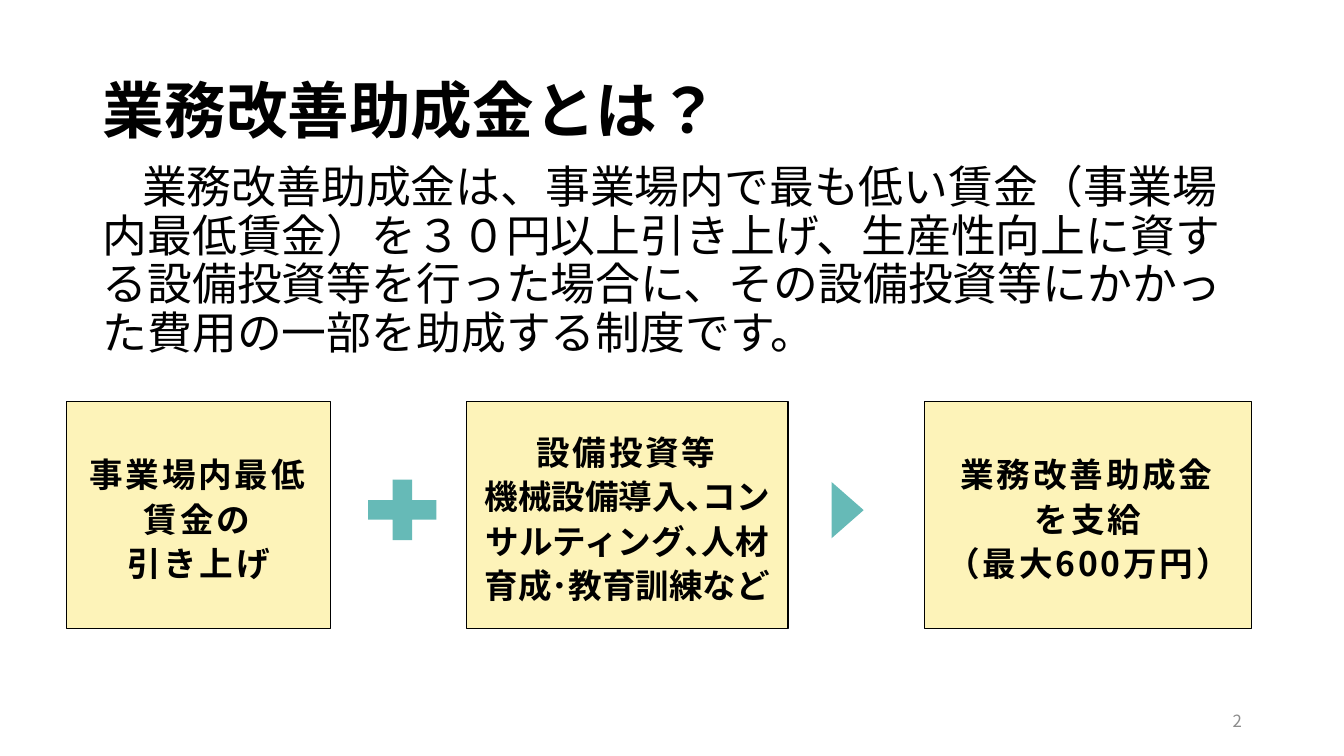
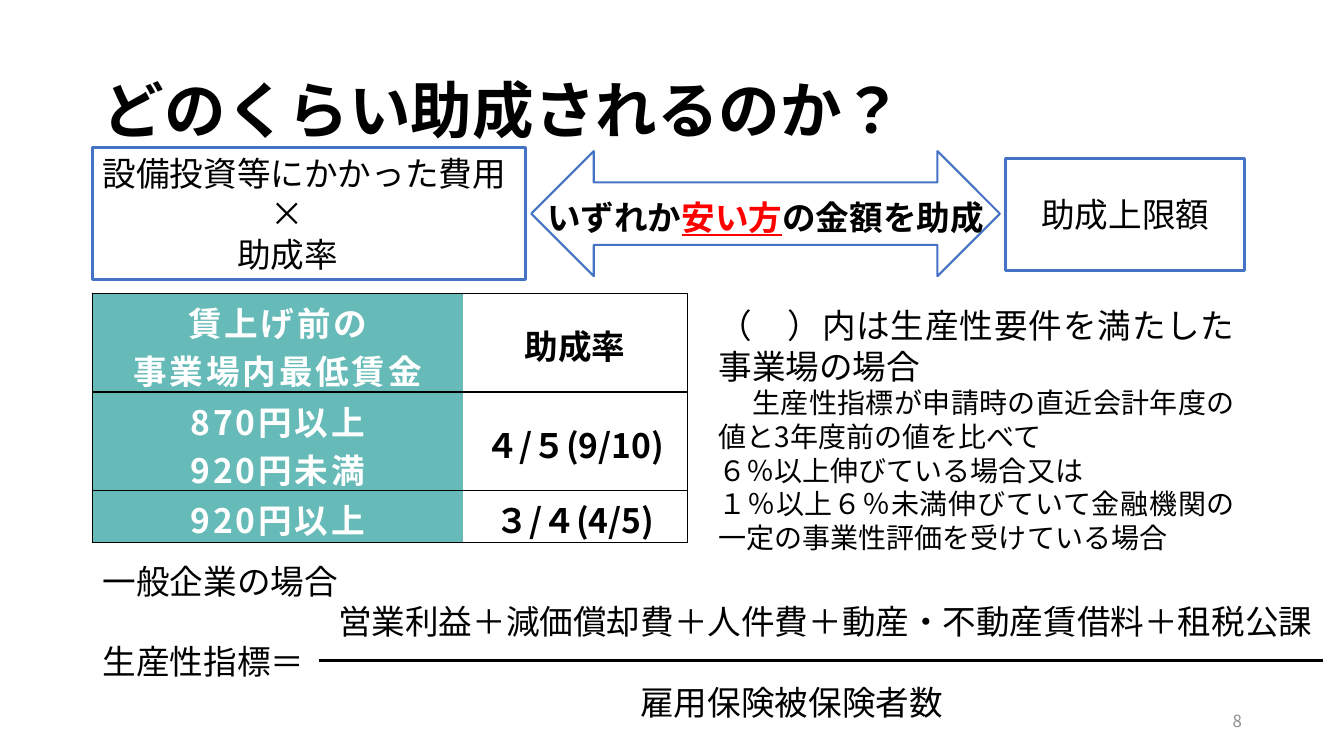
from pptx import Presentation
from pptx.dml.color import RGBColor
from pptx.enum import shapes, text
from pptx.oxml.ns import qn
from pptx.util import Cm, Pt
from lxml import etree

# Shared look
BLACK = RGBColor(0x00, 0x00, 0x00)
WHITE = RGBColor(0xFF, 0xFF, 0xFF)
GREY = RGBColor(0x8C, 0x8C, 0x8C)
RED = RGBColor(0xFF, 0x00, 0x00)
BLUE = RGBColor(0x44, 0x72, 0xC4)
TEAL = RGBColor(0x66, 0xBA, 0xB7)
CREAM = RGBColor(0xFD, 0xF3, 0xB9)
FONT = "Noto Sans CJK JP"
MARGIN = 2.34
CONTENT_WIDTH = 29.21

SHAPE = shapes.MSO_SHAPE
ALIGN = text.PP_ALIGN
ANCHOR = text.MSO_ANCHOR


def add_run(paragraph, words, size=24, color=BLACK, bold=False,
            underline=False, spacing=0):
    """Add one styled run; spacing is letter spacing in points."""
    run = paragraph.add_run()
    run.text = words
    font = run.font
    font.name, font.size, font.bold = FONT, Pt(size), bold
    font.color.rgb = color
    if underline:
        font.underline = True
    properties = run._r.get_or_add_rPr()
    properties.set("lang", "ja-JP")
    if spacing:
        properties.set("spc", str(spacing * 100))
    latin = properties.find(qn("a:latin"))
    east_asian = etree.Element(qn("a:ea"), typeface=FONT)
    latin.addnext(east_asian)


def add_paragraph(frame, words, align=ALIGN.LEFT, line=1.0, left=0,
                  first=0, **style):
    """Add a paragraph; words is a string or a list of (string, style)."""
    paragraph = frame.paragraphs[0]
    if paragraph.runs:
        paragraph = frame.add_paragraph()
    paragraph.alignment, paragraph.line_spacing = align, line
    properties = paragraph._p.get_or_add_pPr()
    properties.set("marL", str(Cm(left)))
    properties.set("indent", str(Cm(first)))
    pieces = [(words, {})] if isinstance(words, str) else words
    for piece, own_style in pieces:
        for number, part in enumerate(piece.split("\n")):
            if number:
                paragraph.add_line_break()
            if part:
                add_run(paragraph, part, **{**style, **own_style})


def add_text_box(slide, x, y, width, height, anchor=ANCHOR.TOP):
    box = slide.shapes.add_textbox(Cm(x), Cm(y), Cm(width), Cm(height))
    frame = box.text_frame
    frame.word_wrap = True
    frame.vertical_anchor = anchor
    return frame


def add_preset(slide, preset, x, y, width, height, fill=None, line=None,
               line_width=0.75):
    shape = slide.shapes.add_shape(preset, Cm(x), Cm(y), Cm(width), Cm(height))
    shape.shadow.inherit = False
    if fill is None:
        shape.fill.background()
    else:
        shape.fill.solid()
        shape.fill.fore_color.rgb = fill
    if line is None:
        shape.line.fill.background()
    else:
        shape.line.color.rgb = line
        shape.line.width = Pt(line_width)
    shape.text_frame.word_wrap = True
    shape.text_frame.vertical_anchor = ANCHOR.MIDDLE
    return shape


def add_titled_slide(deck, title, page):
    """Title-only slide with the shared title style and page number."""
    slide = deck.slides.add_slide(deck.slide_layouts[5])
    heading = slide.shapes.title
    heading.left, heading.top = Cm(MARGIN), Cm(1.02)
    heading.width, heading.height = Cm(CONTENT_WIDTH), Cm(3.68)
    frame = heading.text_frame
    frame.word_wrap = True
    frame.auto_size = text.MSO_AUTO_SIZE.NONE
    frame.vertical_anchor = ANCHOR.MIDDLE
    add_paragraph(frame, title, line=0.9, size=44, bold=True)
    footer = add_text_box(slide, 23.93, 17.65, 7.62, 1.02, ANCHOR.MIDDLE)
    add_paragraph(footer, page, ALIGN.RIGHT, size=12, color=GREY)
    return slide


def add_step(slide, x, width, paragraphs):
    """Cream box in the row of steps."""
    step = add_preset(slide, SHAPE.RECTANGLE, x, 10.11, width, 5.72, CREAM, BLACK)
    frame = step.text_frame
    frame.margin_left = frame.margin_right = Cm(0.3)
    frame.margin_top, frame.margin_bottom = Cm(0.2), Cm(0.1)
    for words in paragraphs:
        add_paragraph(frame, words, ALIGN.CENTER, line=1.1, bold=True, spacing=2)


def set_borders(cell, visible):
    """Draw the named edges (L, R, T, B) in black and hide the others."""
    properties = cell._tc.get_or_add_tcPr()
    for edge in "LRTB":
        line = etree.SubElement(properties, qn(f"a:ln{edge}"), w=str(Pt(1)))
        if edge in visible:
            fill = etree.SubElement(line, qn("a:solidFill"))
            etree.SubElement(fill, qn("a:srgbClr"), val=str(BLACK))
        else:
            etree.SubElement(line, qn("a:noFill"))


def add_rate_table(slide, rows, column_widths, row_heights):
    table = slide.shapes.add_table(
        len(rows), len(column_widths), Cm(MARGIN), Cm(7.39),
        Cm(sum(column_widths)), Cm(sum(row_heights))).table
    for column, width in zip(table.columns, column_widths):
        column.width = Cm(width)
    for row, height, (wage, rate) in zip(table.rows, row_heights, rows):
        row.height = Cm(height)
        wage_cell, rate_cell = row.cells
        for cell, edges in ((wage_cell, "LTB"), (rate_cell, "RTB")):
            set_borders(cell, edges)
            cell.margin_left = cell.margin_right = Cm(0.2)
            cell.margin_top, cell.margin_bottom = Cm(0.1), 0
            cell.vertical_anchor = ANCHOR.MIDDLE
        wage_cell.fill.solid()
        wage_cell.fill.fore_color.rgb = TEAL
        rate_cell.fill.background()
        for words in wage:
            add_paragraph(wage_cell.text_frame, words, ALIGN.CENTER,
                          color=WHITE, bold=True, spacing=2)
        add_paragraph(rate_cell.text_frame, rate, ALIGN.CENTER, bold=True)


def add_fraction_bar(slide, x1, x2, y):
    bar = slide.shapes.add_connector(
        shapes.MSO_CONNECTOR.STRAIGHT, Cm(x1), Cm(y), Cm(x2), Cm(y))
    bar.line.color.rgb = BLACK
    bar.line.width = Pt(2.25)
    etree.SubElement(bar._element.spPr, qn("a:effectLst"))


def build_overview(deck):
    slide = add_titled_slide(deck, "業務改善助成金とは？", "2")

    # Explanation
    summary = add_text_box(slide, MARGIN, 4.04, CONTENT_WIDTH, 5.72)
    add_paragraph(
        summary,
        "業務改善助成金は、事業場内で最も低い賃金（事業場内最低賃金）を３０円以上引き上げ、"
        "生産性向上に資する設備投資等を行った場合に、その設備投資等にかかった費用の一部を"
        "助成する制度です。",
        line=0.9, first=0.99, size=32)

    # Raise + investment > subsidy
    add_step(slide, 1.68, 6.65,
             [[("事業場内最低賃金の\n引き上", {}), ("げ", {"spacing": 0})]])
    add_step(slide, 11.76, 8.1,
             [[("設備投資等\n", {}),
               ("機械設備導入､コンサルティング､人材育成･教育訓練など", {"spacing": 0})]])
    add_step(slide, 23.29, 8.26, ["業務改善助成金\nを支給", "（最大600万円）"])
    add_preset(slide, SHAPE.MATH_PLUS, 8.97, 11.81, 2.34, 2.08, TEAL)
    pointer = add_preset(slide, SHAPE.ISOSCELES_TRIANGLE, 20.65, 12.45, 1.42, 0.81, TEAL)
    pointer.rotation = 90


def build_amount(deck):
    slide = add_titled_slide(deck, "どのくらい助成されるのか？", "8")

    # The two amounts compared
    cost = add_preset(slide, SHAPE.RECTANGLE, MARGIN, 3.71, 10.9, 3.33,
                      line=BLUE, line_width=2).text_frame
    for words, left in (("設備投資等にかかった費用", 0), ("×", 4.23), ("助成率", 3.39)):
        add_paragraph(cost, words, left=left)
    limit = add_preset(slide, SHAPE.RECTANGLE, 25.35, 3.99, 6.02, 2.82,
                       line=BLUE, line_width=2).text_frame
    add_paragraph(limit, "助成上限額", ALIGN.CENTER)
    add_preset(slide, SHAPE.LEFT_RIGHT_ARROW, 13.39, 3.81, 11.81, 3.15,
               line=BLUE, line_width=1.5)
    choice = add_text_box(slide, 13.54, 4.83, 11.66, 1.27)
    add_paragraph(choice, [("いずれか", {}),
                           ("安い方", {"color": RED, "underline": True}),
                           ("の金額を助成", {})], bold=True)

    # Subsidy rates
    add_rate_table(slide, [
        (["賃上げ前の", "事業場内最低賃金"], "助成率"),
        (["870円以上", "920円未満"], "４/５(9/10)"),
        (["920円以上"], "３/４(4/5)"),
    ], [9.32, 5.66], [2.49, 2.49, 1.3])

    # Productivity condition
    condition = add_text_box(slide, 17.86, 7.57, 13.51, 7.77)
    add_paragraph(condition, "（　）内は生産性要件を満たした事業場の場合", ALIGN.JUSTIFY)
    for words, first in (
            ("生産性指標が申請時の直近会計年度の値と3年度前の値を比べて", 0.85),
            ("６％以上伸びている場合又は", 0),
            ("１％以上６％未満伸びていて金融機関の一定の事業性評価を受けている場合", 0)):
        add_paragraph(condition, words, ALIGN.JUSTIFY, first=first, size=20)

    # Productivity formula
    formula = add_text_box(slide, MARGIN, 14, 31.01, 4.37)
    for words, left in (
            ("一般企業の場合", 0),
            ("営業利益＋減価償却費＋人件費＋動産・不動産賃借料＋租税公課", 5.93),
            ("生産性指標＝", 0),
            ("雇用保険被保険者数", 13.55)):
        add_paragraph(formula, words, left=left)
    add_fraction_bar(slide, 8.03, 33.35, 16.64)


def main():
    deck = Presentation()
    deck.slide_width, deck.slide_height = Cm(33.87), Cm(19.05)
    build_overview(deck)
    build_amount(deck)
    deck.save("out.pptx")


if __name__ == "__main__":
    main()
